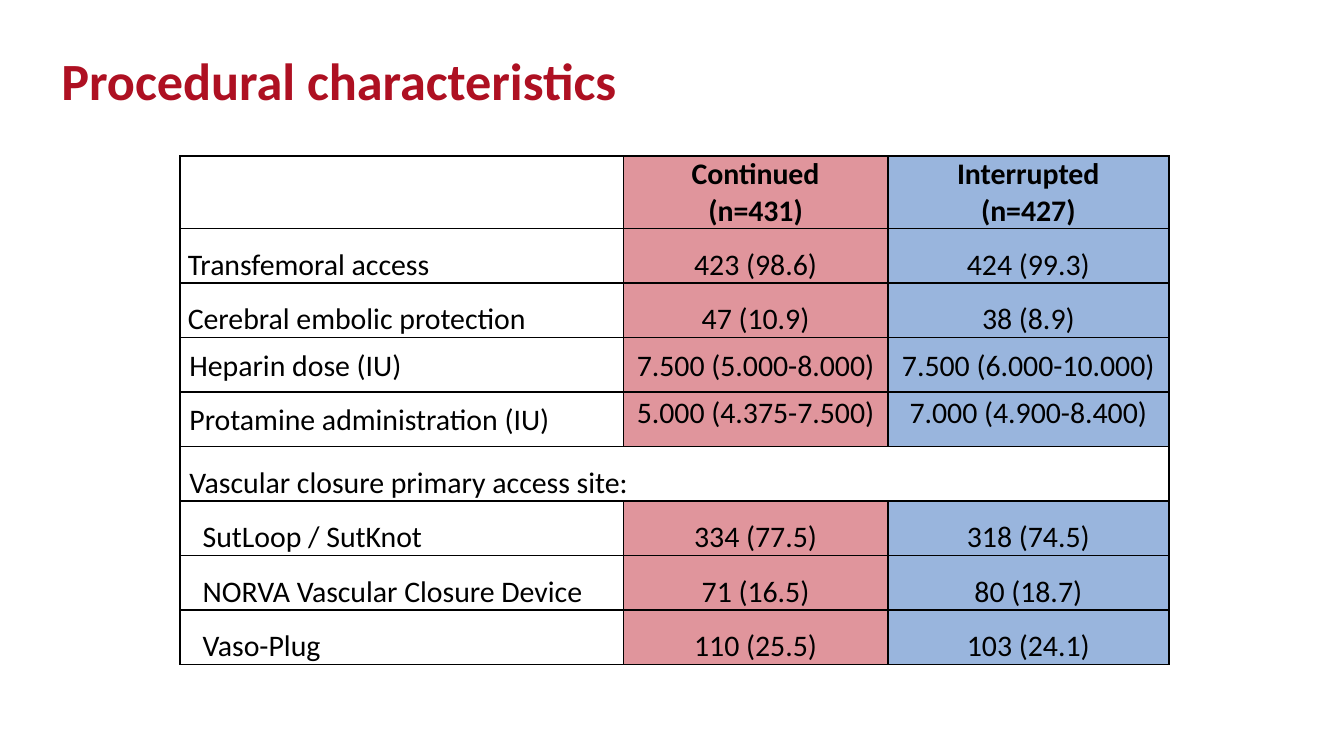
from lxml import etree
from pptx import Presentation
from pptx.dml.color import RGBColor
from pptx.enum import text as t
from pptx.oxml import ns
from pptx.util import Cm, Pt

CRIMSON = RGBColor(0xAE, 0x10, 0x22)
BLACK = RGBColor(0, 0, 0)
PINK = RGBColor(0xE0, 0x95, 0x9C)
BLUE = RGBColor(0x99, 0xB5, 0xDD)

LEFT, CENTER = t.PP_ALIGN.LEFT, t.PP_ALIGN.CENTER


def write(frame, content, size=16, bold=False, color=BLACK, align=LEFT, spacing=1.0):
    """Fill a text frame, one paragraph per line of content."""
    for number, line in enumerate(content.split("\n")):
        paragraph = frame.add_paragraph() if number else frame.paragraphs[0]
        paragraph.alignment = align
        paragraph.line_spacing = spacing
        paragraph.font.size = Pt(size)
        if line:
            run = paragraph.add_run()
            run.text = line
            run.font.name = "Calibri"
            run.font.size = Pt(size)
            run.font.bold = bold
            run.font.color.rgb = color


def add_borders(cell):
    properties = cell._tc.get_or_add_tcPr()
    for side in ("a:lnL", "a:lnR", "a:lnT", "a:lnB"):
        line = etree.SubElement(properties, ns.qn(side), w=str(Pt(1)))
        fill = etree.SubElement(line, ns.qn("a:solidFill"))
        etree.SubElement(fill, ns.qn("a:srgbClr"), val=str(BLACK))


presentation = Presentation()
presentation.slide_width, presentation.slide_height = Cm(25.4), Cm(14.29)
slide = presentation.slides.add_slide(presentation.slide_layouts[6])

title = slide.shapes.add_textbox(Cm(0.91), Cm(0.94), Cm(21.2), Cm(1.2)).text_frame
title.word_wrap = True
write(title, "Procedural characteristics", size=28, bold=True, color=CRIMSON, spacing=0.89)

# Label, continued group, interrupted group, line spacing, side margin, indent
rows = [
    ("", "Continued\n(n=431)", "Interrupted\n(n=427)", 1.0, 0.15, 0),
    ("Transfemoral access", "423 (98.6)", "424 (99.3)", 1.5, 0.15, 0),
    ("Cerebral embolic protection", "47 (10.9)", "38 (8.9)", 1.5, 0.15, 0),
    ("Heparin dose (IU)", "7.500 (5.000-8.000)", "7.500 (6.000-10.000)", 1.07, 0.18, 0),
    ("Protamine administration (IU)", "5.000 (4.375-7.500)", "7.000 (4.900-8.400)", 1.07, 0.18, 0),
    ("Vascular closure primary access site:", "", "", 1.5, 0.18, 0),
    ("SutLoop / SutKnot", "334 (77.5)", "318 (74.5)", 1.5, 0.18, 0.25),
    ("NORVA Vascular Closure Device", "71 (16.5)", "80 (18.7)", 1.5, 0.18, 0.25),
    ("Vaso-Plug", "110 (25.5)", "103 (24.1)", 1.5, 0.18, 0.25),
]
HEADER, PROTAMINE, CLOSURE = 0, 4, 5
column_widths = (8.38, 5, 5.31)
header_height, row_height = 1.37, 1.03

table = slide.shapes.add_table(
    len(rows), len(column_widths), Cm(3.4), Cm(2.95), Cm(sum(column_widths)),
    Cm(header_height + row_height * (len(rows) - 1))).table
table.first_row = table.horz_banding = False
for column, width in zip(table.columns, column_widths):
    column.width = Cm(width)

for r, (*values, spacing, margin, indent) in enumerate(rows):
    table.rows[r].height = Cm(row_height if r else header_height)
    for c, value in enumerate(values):
        cell = table.cell(r, c)
        cell.margin_top = cell.margin_bottom = 0
        cell.margin_left = Cm(margin + (0 if c else indent))
        cell.margin_right = Cm(margin)
        top_aligned = r == PROTAMINE and c > 0
        cell.vertical_anchor = t.MSO_ANCHOR.TOP if top_aligned else t.MSO_ANCHOR.MIDDLE
        add_borders(cell)
        if c and r != CLOSURE:
            cell.fill.solid()
            cell.fill.fore_color.rgb = PINK if c == 1 else BLUE
        else:
            cell.fill.background()
        write(cell.text_frame, value, bold=r == HEADER,
              align=CENTER if c else LEFT, spacing=spacing)

table.cell(CLOSURE, 0).merge(table.cell(CLOSURE, 2))

presentation.save("out.pptx")
